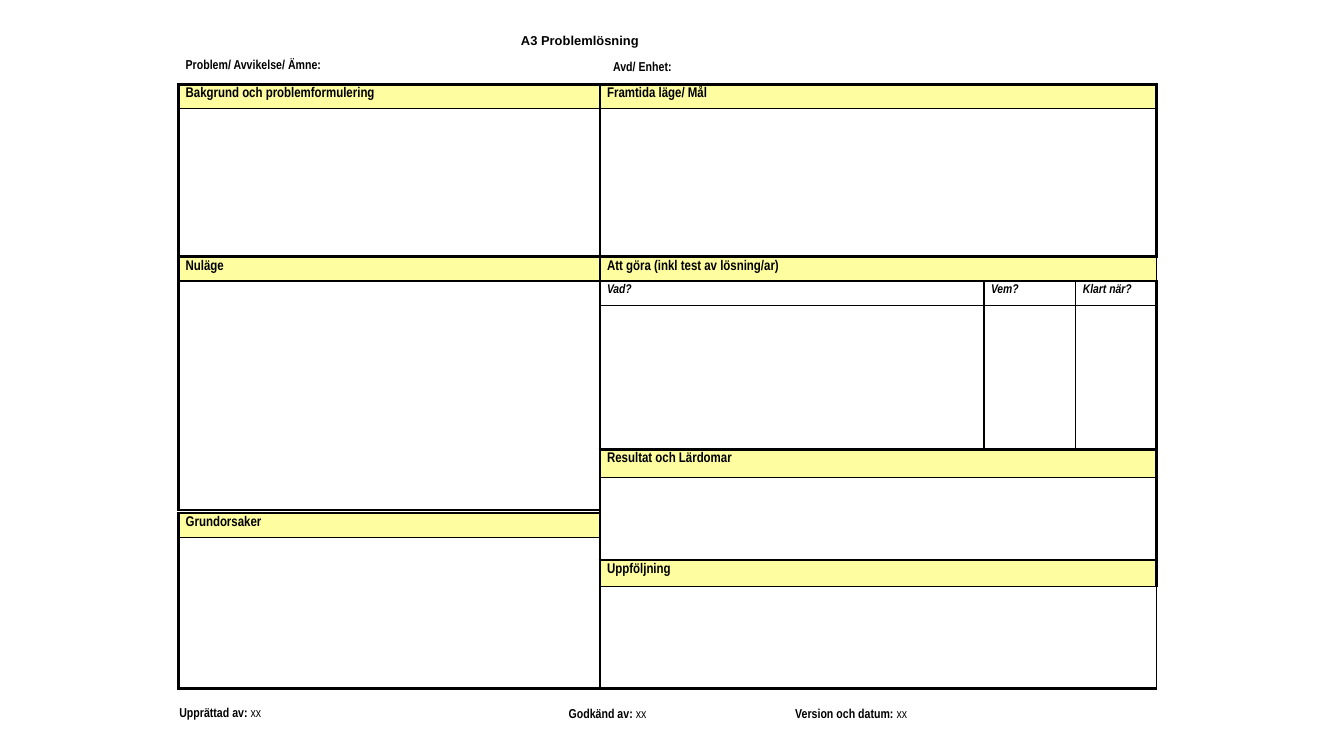
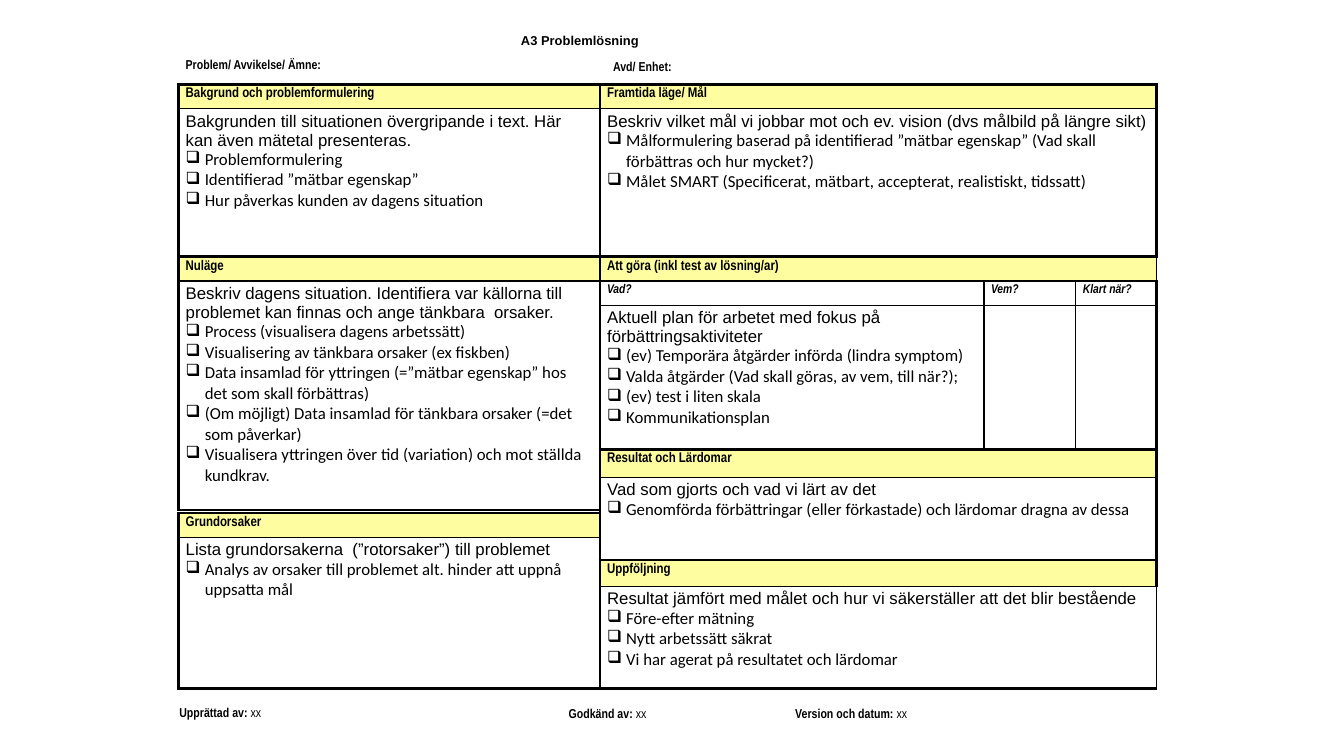
import pptx
import pptx.dml.color
import pptx.enum.text
import pptx.oxml.ns
import pptx.util
import lxml.etree

Cm = pptx.util.Cm
Pt = pptx.util.Pt
qn = pptx.oxml.ns.qn

BLACK = "000000"
WHITE = "FFFFFF"
YELLOW = "FEFEA0"
THIN = 1
THICK = 2.25

MARGINS = {
    "margin_left": Cm(0.18),
    "margin_right": Cm(0.18),
    "margin_top": Cm(0.08),
    "margin_bottom": Cm(0.08),
}
FRAME = {
    **MARGINS,
    "word_wrap": True,
    "auto_size": pptx.enum.text.MSO_AUTO_SIZE.SHAPE_TO_FIT_TEXT,
}
TITLE = {"name": "Arial", "size": Pt(9.2), "bold": True}
LABEL = {"name": "Arial Narrow", "size": Pt(9.2), "bold": True}
ENTRY = {**LABEL, "bold": False}
HEADING = {**LABEL, "size": Pt(10)}
COLUMN_HEADING = {**LABEL, "size": Pt(9), "italic": True}
GUIDE = {"name": "Arial", "size": Pt(12), "bold": False}
CHECK = {**GUIDE, "name": "Calibri"}

LABELS = [
    (4.5, 1.35, 5.49, [("Problem/ Avvikelse/ Ämne:", LABEL)]),
    (12.95, 0.74, 5.84, [("A3 Problemlösning", TITLE)]),
    (15.27, 1.4, 5.64, [("Avd/ Enhet:", LABEL)]),
    (4.34, 17.68, 9.37, [("Upprättad av: ", LABEL), ("xx", ENTRY)]),
    (14.15, 17.7, 11.63, [("Godkänd av: ", LABEL), ("xx", ENTRY)]),
    (19.86, 17.7, 3.76, [("Version och datum: ", LABEL), ("xx", ENTRY)]),
]

SECTIONS_LEFT = [
    {
        "heading": "Bakgrund och problemformulering",
        "rows": [0.61, 3.73],
        "guide": "Bakgrunden till situationen övergripande i text. Här kan även mätetal presenteras.",
        "checks": [
            "Problemformulering",
            "Identifierad ”mätbar egenskap”",
            "Hur påverkas kunden av dagens situation",
        ],
    },
    {
        "heading": "Nuläge",
        "rows": [0.61, 5.77],
        "bottom": THIN,
        "gap": 0.08,
        "guide": "Beskriv dagens situation. Identifiera var källorna till problemet kan finnas och ange tänkbara  orsaker.",
        "checks": [
            "Process (visualisera dagens arbetssätt)",
            "Visualisering av tänkbara orsaker (ex fiskben)",
            "Data insamlad för yttringen (=”mätbar egenskap” hos det som skall förbättras)",
            "(Om möjligt) Data insamlad för tänkbara orsaker (=det som påverkar)",
            "Visualisera yttringen över tid (variation) och mot ställda kundkrav.",
        ],
    },
    {
        "heading": "Grundorsaker",
        "rows": [0.61, 3.81],
        "guide": "Lista grundorsakerna  (”rotorsaker”) till problemet",
        "checks": ["Analys av orsaker till problemet alt. hinder att uppnå uppsatta mål"],
    },
]
SECTIONS_RIGHT = [
    {
        "heading": "Framtida läge/ Mål",
        "rows": [0.61, 3.73],
        "guide": "Beskriv vilket mål vi jobbar mot och ev. vision (dvs målbild på längre sikt)",
        "checks": [
            "Målformulering baserad på identifierad ”mätbar egenskap” (Vad skall förbättras och hur mycket?)",
            "Målet SMART (Specificerat, mätbart, accepterat, realistiskt, tidssatt)",
        ],
    },
    {
        "heading": "Att göra (inkl test av lösning/ar)",
        "rows": [0.61, 0.61, 3.63],
        "columns": [9.68, 2.31, 2.03],
        "column_headings": ["Vad?", "Vem?", "Klart när?"],
        "guide": "Aktuell plan för arbetet med fokus på förbättringsaktiviteter",
        "checks": [
            "(ev) Temporära åtgärder införda (lindra symptom)",
            "Valda åtgärder (Vad skall göras, av vem, till när?);",
            "(ev) test i liten skala",
            "Kommunikationsplan",
        ],
    },
    {
        "heading": "Resultat och Lärdomar",
        "rows": [0.71, 2.08],
        "guide": "Vad som gjorts och vad vi lärt av det",
        "checks": ["Genomförda förbättringar (eller förkastade) och lärdomar dragna av dessa"],
    },
    {
        "heading": "Uppföljning",
        "rows": [0.66, 2.57],
        "right": THIN,
        "guide": "Resultat jämfört med målet och hur vi säkerställer att det blir bestående",
        "checks": [
            "Före-efter mätning",
            "Nytt arbetssätt säkrat",
            "Vi har agerat på resultatet och lärdomar",
        ],
    },
]
TOP = 2.13
SIDES = [(4.5, 10.62, SECTIONS_LEFT), (15.12, 14.02, SECTIONS_RIGHT)]


def paint(fill, colour):
    fill.solid()
    fill.fore_color.rgb = pptx.dml.color.RGBColor.from_string(colour)


def write(para, text, style):
    span = para.add_run()
    span.text = text
    for name, value in style.items():
        setattr(span.font, name, value)
    paint(span.font.fill, BLACK)


deck = pptx.Presentation()
deck.slide_width = Cm(33.87)
deck.slide_height = Cm(19.05)

for guided in (False, True):
    page = deck.slides.add_slide(deck.slide_layouts[6])

    for left, top, width, spans in LABELS:
        box = page.shapes.add_textbox(Cm(left), Cm(top), Cm(width), Cm(0.56))
        for name, value in FRAME.items():
            setattr(box.text_frame, name, value)
        for text, style in spans:
            write(box.text_frame.paragraphs[0], text, style)

    for left, width, sections in SIDES:
        top = TOP
        for section in sections:
            rows = section["rows"]
            columns = section.get("columns", [width])
            table = page.shapes.add_table(
                len(rows), len(columns), Cm(left), Cm(top), Cm(width), Cm(sum(rows))
            ).table
            table.first_row = False
            table.horz_banding = False
            top += sum(rows) + section.get("gap", 0)
            for row, height in zip(table.rows, rows):
                row.height = Cm(height)
            for column, column_width in zip(table.columns, columns):
                column.width = Cm(column_width)

            last_row, last_column = len(rows) - 1, len(columns) - 1
            for r in range(len(rows)):
                for c in range(len(columns)):
                    cell = table.cell(r, c)
                    for name, value in MARGINS.items():
                        setattr(cell, name, value)
                    right = section.get("right", THICK) if r else THICK
                    edges = {
                        "a:lnL": THIN if c else THICK,
                        "a:lnR": right if c == last_column else THIN,
                        "a:lnT": THIN if r else THICK,
                        "a:lnB": section.get("bottom", THICK) if r == last_row else THIN,
                    }
                    properties = cell._tc.get_or_add_tcPr()
                    for edge, weight in edges.items():
                        line = lxml.etree.SubElement(properties, qn(edge), w=str(Pt(weight)))
                        solid = lxml.etree.SubElement(line, qn("a:solidFill"))
                        lxml.etree.SubElement(solid, qn("a:srgbClr"), val=BLACK)
                    paint(cell.fill, WHITE if r else YELLOW)

            heading = table.cell(0, 0)
            if last_column:
                heading.merge(table.cell(0, last_column))
            write(heading.text_frame.paragraphs[0], section["heading"], HEADING)
            for c, text in enumerate(section.get("column_headings", [])):
                write(table.cell(1, c).text_frame.paragraphs[0], text, COLUMN_HEADING)

            if guided:
                body = table.cell(last_row, 0).text_frame
                write(body.paragraphs[0], section["guide"], GUIDE)
                for check in section["checks"]:
                    para = body.add_paragraph()
                    bullet = para._p.get_or_add_pPr()
                    bullet.set("marL", str(Cm(0.48)))
                    bullet.set("indent", str(-Cm(0.48)))
                    lxml.etree.SubElement(bullet, qn("a:buChar"), char="❑")
                    write(para, check, CHECK)

deck.save("out.pptx")
